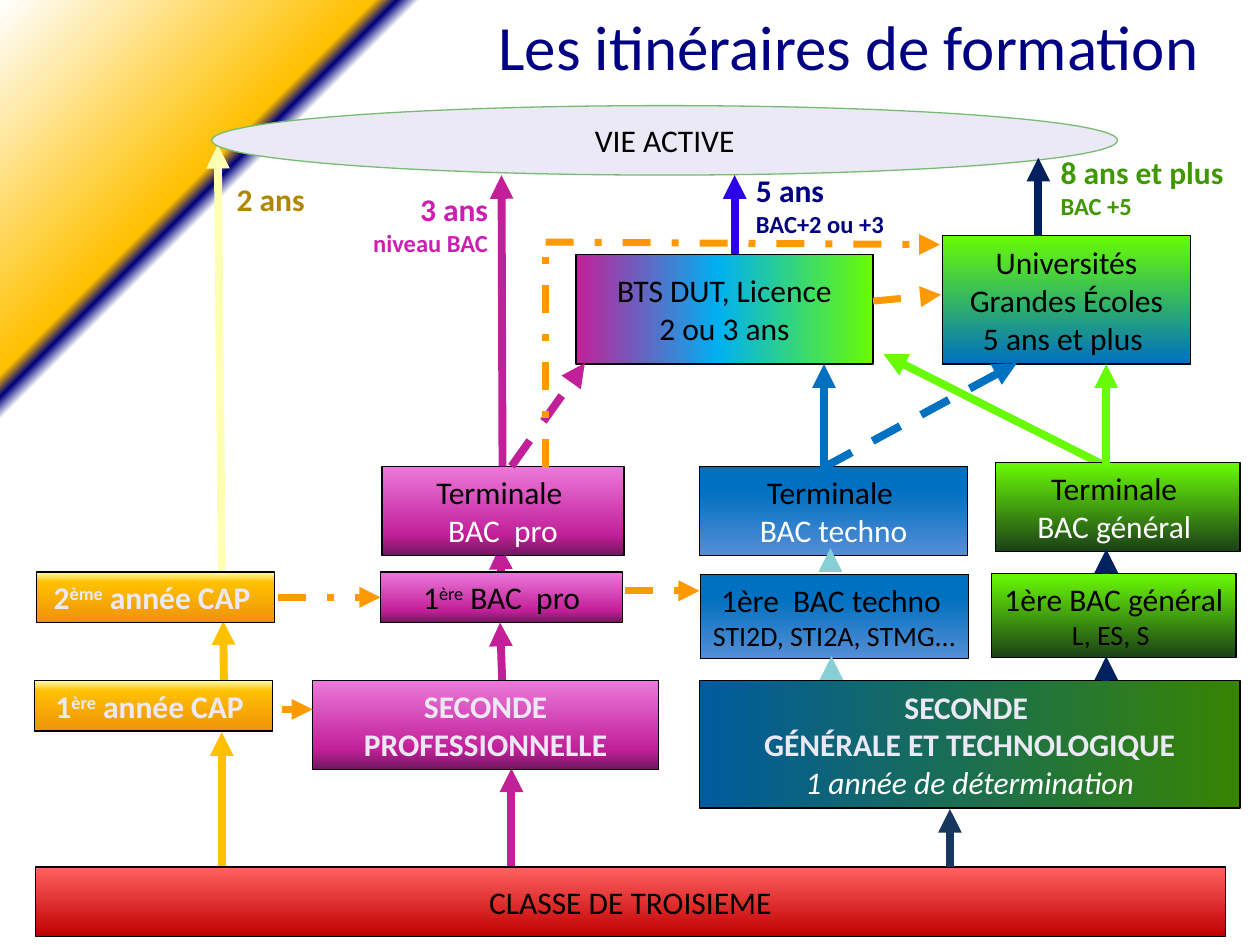
from lxml import etree
from pptx import Presentation
from pptx.dml.color import RGBColor
from pptx.enum.dml import MSO_LINE
from pptx.enum.shapes import MSO_CONNECTOR, MSO_SHAPE
from pptx.enum.text import MSO_ANCHOR, PP_ALIGN
from pptx.oxml.ns import qn
from pptx.util import Cm, Pt

RECT, OVAL = MSO_SHAPE.RECTANGLE, MSO_SHAPE.OVAL
STRAIGHT = MSO_CONNECTOR.STRAIGHT
LEFT, CENTER, RIGHT = PP_ALIGN.LEFT, PP_ALIGN.CENTER, PP_ALIGN.RIGHT
MIDDLE, TOP = MSO_ANCHOR.MIDDLE, MSO_ANCHOR.TOP
DASH, DASH_DOT = MSO_LINE.DASH, MSO_LINE.DASH_DOT

# Colours of the tracks
BLACK, WHITE, PALE = "000000", "FFFFFF", "ECE9F7"
PINK, GOLD, CREAM, BLUE = "C22098", "FFC000", "FFFFB3", "0070C0"
LIME, NAVY, AQUA, ORANGE = "69FB05", "002060", "86D0D4", "FF9900"
TITLE_BLUE = "000082"

# Gradients: angle clockwise, then (position, colour) stops
PAGE = (225, [(0, WHITE), (81, WHITE), (82, TITLE_BLUE), (83, GOLD), (100, WHITE)])
RED_FILL = (90, [(0, "FF6161"), (100, "C00000")])
CAP_FILL = (90, [(0, CREAM), (20, GOLD), (100, "EF930B")])
PRO_FILL = (90, [(0, "EB79DB"), (77, PINK), (100, "6E185E")])
TECHNO_FILL = (90, [(0, BLUE), (27, BLUE), (100, "558ED5")])
GENERAL_FILL = (90, [(0, LIME), (100, "1B4018")])
SECONDE_FILL = (0, [(0, "005A9E"), (100, "378402")])
BTS_FILL = (180, [(0, LIME), (52, "00B0F0"), (100, PINK)])
UNIVERSITY_FILL = (90, [(0, LIME), (100, BLUE)])


def rgb(value):
    return RGBColor.from_string(value)


def set_gradient(fill, owner, gradient):
    angle, stops = gradient
    fill.gradient()
    fill.gradient_angle = -angle % 360
    stop_list = owner.find(".//" + qn("a:gsLst"))
    for old_stop in list(stop_list):
        stop_list.remove(old_stop)
    for position, colour in stops:
        stop = etree.SubElement(stop_list, qn("a:gs"), pos=str(position * 1000))
        etree.SubElement(stop, qn("a:srgbClr"), val=colour)


def add_run(paragraph, text, size=18, colour=BLACK, bold=False, italic=False,
            raised=False, font="Calibri"):
    run = paragraph.add_run()
    run.text = text
    run.font.name, run.font.size = font, Pt(size)
    run.font.bold, run.font.italic = bold, italic
    run.font.color.rgb = rgb(colour)
    if raised:
        run._r.get_or_add_rPr().set("baseline", "30000")


class Pathways:
    def __init__(self, slide):
        self.slide = slide

    def fill_text(self, frame, lines, align, anchor, margin, **style):
        """Each line is a string or a list of (text, format) runs."""
        frame.word_wrap = True
        frame.vertical_anchor = anchor
        frame.margin_left = frame.margin_right = Cm(margin)
        for index, line in enumerate(lines):
            paragraph = frame.add_paragraph() if index else frame.paragraphs[0]
            paragraph.alignment = align
            for text, own in [(line, {})] if isinstance(line, str) else line:
                add_run(paragraph, text, **{**style, **own})

    def box(self, place, lines, fill, outline=BLACK, kind=RECT, **style):
        shape = self.slide.shapes.add_shape(kind, *map(Cm, place))
        shape.shadow.inherit = False
        if isinstance(fill, str):
            shape.fill.solid()
            shape.fill.fore_color.rgb = rgb(fill)
        else:
            set_gradient(shape.fill, shape._element, fill)
        shape.line.color.rgb = rgb(outline)
        shape.line.width = Pt(0.75)
        self.fill_text(shape.text_frame, lines, CENTER, MIDDLE, 0.13, **style)

    def label(self, place, lines, align=LEFT, anchor=TOP, **style):
        frame = self.slide.shapes.add_textbox(*map(Cm, place)).text_frame
        self.fill_text(frame, lines, align, anchor, 0.25, **style)

    def arrow(self, ends, colour, width=4.5, dash=None, head=True):
        route = self.slide.shapes.add_connector(STRAIGHT, *map(Cm, ends))
        route.line.color.rgb = rgb(colour)
        route.line.width = Pt(width)
        if dash is not None:
            route.line.dash_style = dash
        if head:
            outline = route._element.spPr.find(qn("a:ln"))
            etree.SubElement(outline, qn("a:tailEnd"), type="triangle")
        etree.SubElement(route._element.spPr, qn("a:effectLst"))


def main():
    prs = Presentation()
    prs.slide_width, prs.slide_height = Cm(25.4), Cm(19.05)
    slide = prs.slides.add_slide(prs.slide_layouts[6])
    set_gradient(slide.background.fill, slide._element, PAGE)
    page = Pathways(slide)

    # Routes passing behind the boxes
    for ends, colour in [
        ((10.13, 12.32, 10.08, 11), PINK),
        ((4.52, 14.3, 4.5, 12.52), GOLD),
        ((10.13, 13.89, 10.08, 12.55), PINK),
        ((4.47, 11.53, 4.39, 2.92), CREAM),
        ((22.3, 9.4, 17.81, 7.14), LIME),
        ((4.47, 17.86, 4.47, 14.76), GOLD),
        ((10.31, 18.06, 10.31, 15.49), PINK),
    ]:
        page.arrow(ends, colour)

    # Starting class and first years
    white, small = {"colour": WHITE}, {"size": 16}
    page.box((0.71, 17.48, 24, 1.4), ["CLASSE DE TROISIEME"], RED_FILL)
    page.box((14.1, 13.72, 10.9, 2.57),
             ["SECONDE ", "GÉNÉRALE ET TECHNOLOGIQUE",
              [("1 année de détermination", {"colour": WHITE, "bold": False, "italic": True})]],
             SECONDE_FILL, colour=PALE, bold=True)
    page.box((6.3, 13.72, 6.98, 1.8), ["SECONDE PROFESSIONNELLE"], PRO_FILL,
             colour=PALE, bold=True)
    for left, top, year, suffix in [(0.69, 13.72, "1", "ère"), (0.74, 11.53, "2", "ème")]:
        page.box((left, top, 4.8, 1.02),
                 [[(year, {}), (suffix, {"raised": True}), (" année CAP ", {})]],
                 CAP_FILL, colour=PALE, bold=True)

    # Première classes
    page.box((7.67, 11.53, 4.88, 1.02),
             [[("1", {}), ("ère", {"raised": True}), (" BAC  pro", {})]], PRO_FILL)
    page.box((14.12, 11.58, 5.41, 1.7),
             ["1ère  BAC techno ", [("STI2D, STI2A, STMG...", small)]], TECHNO_FILL)
    page.box((19.99, 11.56, 4.93, 1.7),
             ["1ère BAC général", [("L, ES, S ", small)]], GENERAL_FILL)

    # Terminale classes
    for place, diploma, fill in [
        ((7.7, 9.4, 4.88, 1.8), "BAC  pro", PRO_FILL),
        ((14.1, 9.4, 5.41, 1.8), "BAC techno", TECHNO_FILL),
        ((20.07, 9.32, 4.93, 1.8), "BAC général ", GENERAL_FILL),
    ]:
        page.box(place, ["Terminale ", [(diploma, white)]], fill)

    # Higher education and working life
    page.box((4.27, 2.13, 18.26, 1.4), ["VIE ACTIVE"], PALE, outline="76BB71", kind=OVAL)
    page.box((11.61, 5.13, 5.99, 2.21), ["BTS DUT, Licence", "2 ou 3 ans"], BTS_FILL)
    page.box((19, 4.75, 5, 2.59), ["Universités", "Grandes Écoles", "5 ans et plus "],
             UNIVERSITY_FILL)

    # Main routes
    for ends, colour in [
        ((19.15, 17.48, 19.15, 16.31), "17375E"),
        ((16.76, 13.69, 16.76, 13.23), AQUA),
        ((22.3, 13.72, 22.3, 13.23), NAVY),
        ((16.74, 11.53, 16.74, 11.05), AQUA),
        ((22.3, 11.58, 22.3, 11.07), NAVY),
        ((22.3, 9.4, 22.3, 7.34), LIME),
        ((16.61, 9.42, 16.61, 7.34), BLUE),
        ((10.13, 9.4, 10.11, 3.53), PINK),
        ((14.81, 5.13, 14.81, 3.53), "2B00E8"),
        ((20.93, 4.75, 20.93, 3.18), NAVY),
    ]:
        page.arrow(ends, colour)

    # Possible routes and bridges between tracks
    page.arrow((10.31, 9.4, 11.79, 7.32), PINK, dash=DASH)
    page.arrow((16.61, 9.42, 20.5, 7.32), BLUE, dash=DASH)
    page.arrow((11, 9.42, 11, 4.8), ORANGE, 4, DASH_DOT, head=False)
    for ends in [(5.69, 14.3, 6.3, 14.3), (5.61, 12.04, 7.67, 12.04),
                 (12.6, 11.91, 14.1, 11.91), (17.6, 6.07, 18.97, 5.94),
                 (11, 4.88, 18.95, 4.93)]:
        page.arrow(ends, ORANGE, 4, DASH_DOT)

    # Title and lengths of study
    page.label((8.89, 0.13, 16.43, 1.57), ["Les itinéraires de formation"], CENTER, MIDDLE,
               size=36, colour=TITLE_BLUE)
    page.label((4.52, 3.51, 2.18, 1.02), ["2 ans"], colour="B08600", bold=True)
    for place, years, level, align, colour in [
        ((6.91, 3.71, 3.18, 1.63), "3 ans", "niveau BAC", RIGHT, "CC1EB3"),
        ((14.99, 3.33, 3.96, 1.63), "5 ans", "BAC+2 ou +3", LEFT, TITLE_BLUE),
        ((21.13, 2.97, 4.17, 1.63), "8 ans et plus", "BAC +5", LEFT, "3F9802"),
    ]:
        page.label(place, [years, [(level, {"size": 14})]], align, colour=colour, bold=True)

    prs.save("out.pptx")


if __name__ == "__main__":
    main()
